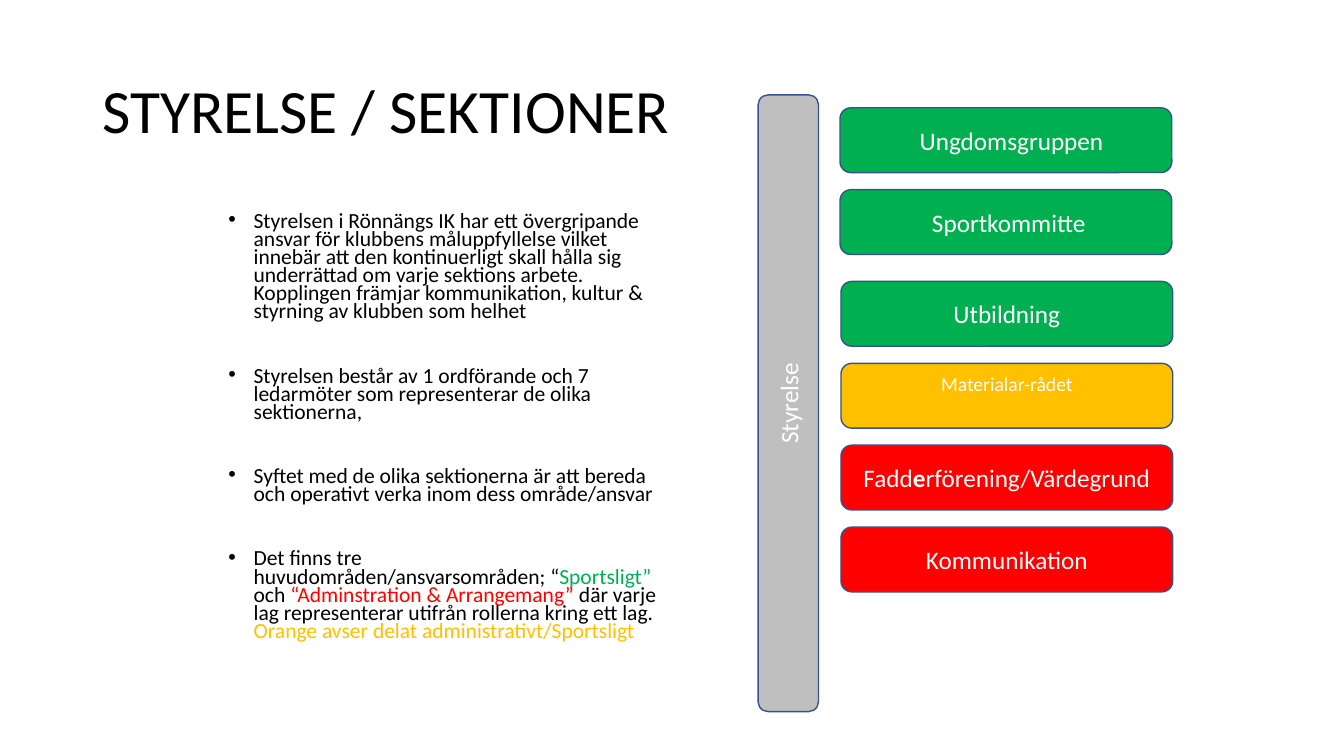
from lxml import etree
from pptx import Presentation
from pptx.dml.color import RGBColor
from pptx.enum import shapes, text
from pptx.oxml import ns
from pptx.util import Pt

COLORS = {
    "black": "000000", "white": "FFFFFF", "green": "00B050", "red": "FF0000",
    "orange": "FFC000", "grey": "BFBFBF", "outline": "325491",
}


def add_runs(p, runs, size):
    for words, color, bold in runs:
        r = p.add_run()
        r.text = words
        for name, value in {"name": "Calibri", "size": Pt(size), "bold": bold}.items():
            setattr(r.font, name, value)
        r.font.color.rgb = RGBColor.from_string(COLORS[color])


def add_box(s, frame, fill, runs, size=18, **frame_format):
    sp = s.shapes.add_shape(shapes.MSO_SHAPE.ROUNDED_RECTANGLE, *map(Pt, frame))
    sp.shadow.inherit = False
    sp.fill.solid()
    sp.fill.fore_color.rgb = RGBColor.from_string(COLORS[fill])
    sp.line.color.rgb = RGBColor.from_string(COLORS["outline"])
    sp.line.width = Pt(1)
    tf = sp.text_frame
    settings = {"word_wrap": True, "vertical_anchor": text.MSO_ANCHOR.MIDDLE}
    for name, value in {**settings, **frame_format}.items():
        setattr(tf, name, value)
    p = tf.paragraphs[0]
    p.alignment = text.PP_ALIGN.CENTER
    add_runs(p, [(words, "white", bold) for words, bold in runs], size)
    return sp


prs = Presentation()
prs.slide_width, prs.slide_height = Pt(960), Pt(540)
s = prs.slides.add_slide(prs.slide_layouts[1])
title, body = s.placeholders

placeholders = [
    (title, (66, 28.8, 828, 104.4), {"vertical_anchor": text.MSO_ANCHOR.MIDDLE}),
    (body, (156, 126, 324, 348), {"vertical_anchor": text.MSO_ANCHOR.TOP, "margin_top": Pt(26.7)}),
]
for sp, frame, frame_format in placeholders:
    for name, value in zip(("left", "top", "width", "height"), frame):
        setattr(sp, name, Pt(value))
    frame_format.update(word_wrap=True, auto_size=text.MSO_AUTO_SIZE.NONE)
    for name, value in frame_format.items():
        setattr(sp.text_frame, name, value)

p = title.text_frame.paragraphs[0]
p.alignment = text.PP_ALIGN.LEFT
p.line_spacing = 0.9
add_runs(p, [("STYRELSE / SEKTIONER", "black", False)], 44)

bullets = [
    [("Styrelsen i Rönnängs IK har ett övergripande ansvar för klubbens måluppfyllelse vilket "
      "innebär att den kontinuerligt skall hålla sig underrättad om varje sektions arbete. "
      "Kopplingen främjar kommunikation, kultur & styrning av klubben som helhet", "black", False)],
    [("Styrelsen består av 1 ordförande och 7 ledarmöter som representerar de olika "
      "sektionerna,", "black", False)],
    [("Syftet med de olika sektionerna är att bereda och operativt verka inom dess "
      "område/ansvar", "black", False)],
    [("Det finns tre  huvudområden/ansvarsområden; “", "black", False),
     ("Sportsligt” ", "green", False),
     ("och ", "black", False),
     ("“Adminstration & Arrangemang” ", "red", False),
     ("där varje lag representerar utifrån rollerna kring ett lag. ", "black", False),
     ("Orange avser delat administrativt/Sportsligt", "orange", False)],
]
tf = body.text_frame
for i, runs in enumerate(bullets):
    p = tf.add_paragraph() if i else tf.paragraphs[0]
    paragraph_format = {
        "alignment": text.PP_ALIGN.LEFT, "line_spacing": 0.7,
        "space_before": Pt(33 if i else 0), "space_after": Pt(0),
    }
    for name, value in paragraph_format.items():
        setattr(p, name, value)
    pPr = p._p.get_or_add_pPr()
    pPr.set("marL", str(Pt(18)))
    pPr.set("indent", str(Pt(-18)))
    etree.SubElement(pPr, ns.qn("a:buFont")).set("typeface", "Arial")
    etree.SubElement(pPr, ns.qn("a:buChar")).set("char", "•")
    add_runs(p, runs, 15.4)

board = add_box(s, (342.8, 266.4, 440.6, 43.2), "grey", [("Styrelse", False)])
board.rotation = 270

sections = [
    ("green", [("Ungdomsgruppen", False)], {"margin_left": Pt(15.2)}),
    ("green", [("Sportkommitte", False)], {"margin_left": Pt(11.2)}),
    ("green", [("Utbildning", False)], {}),
    ("orange", [("Materialar-rådet", False)],
     {"size": 14, "vertical_anchor": text.MSO_ANCHOR.TOP}),
    ("red", [("Fadd", False), ("e", True), ("rförening/Värdegrund", False)], {}),
    ("red", [("Kommunikation", False)], {}),
]
for i, (fill, runs, box_format) in enumerate(sections):
    left, shift = (600, 0) if i < 2 else (600.7, 7)
    add_box(s, (left, 77 + 58.5 * i + shift, 237, 46.3), fill, runs, **box_format)

prs.save("out.pptx")
